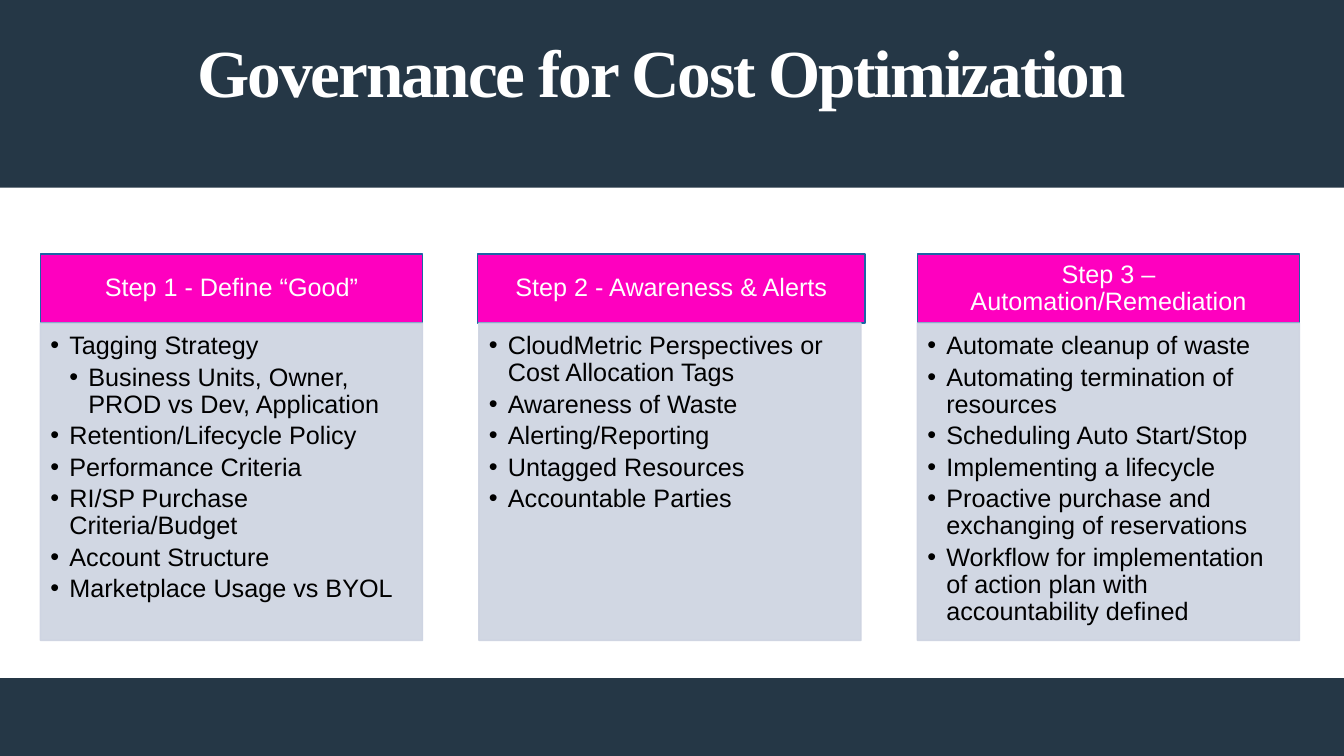
from pptx import Presentation
from pptx.dml.color import RGBColor
from pptx.enum.shapes import MSO_SHAPE
from pptx.enum.text import MSO_ANCHOR, MSO_AUTO_SIZE, PP_ALIGN
from pptx.oxml.ns import qn
from pptx.util import Cm, Pt
from lxml import etree

RECTANGLE = MSO_SHAPE.RECTANGLE
TOP, MIDDLE, BOTTOM = MSO_ANCHOR.TOP, MSO_ANCHOR.MIDDLE, MSO_ANCHOR.BOTTOM
LEFT, CENTER = PP_ALIGN.LEFT, PP_ALIGN.CENTER

NAVY, PINK, BLUE, PALE = "253746", "FE00BF", "1C64A5", "CDD3E1"
WHITE, BLACK = "FFFFFF", "000000"

TITLE = "Governance for Cost Optimization "
# Each step: heading, extra heading width in cm, bullets as (level, text)
STEPS = [
    ("Step 1 - Define “Good”", 0, [
        (1, "Tagging Strategy"),
        (2, "Business Units, Owner, PROD vs Dev, Application"),
        (1, "Retention/Lifecycle Policy"),
        (1, "Performance Criteria"),
        (1, "RI/SP Purchase Criteria/Budget"),
        (1, "Account Structure"),
        (1, "Marketplace Usage vs BYOL"),
    ]),
    ("Step 2 - Awareness & Alerts", 0.13, [
        (1, "CloudMetric Perspectives or Cost Allocation Tags"),
        (1, "Awareness of Waste"),
        (1, "Alerting/Reporting"),
        (1, "Untagged Resources"),
        (1, "Accountable Parties"),
    ]),
    ("Step 3 – Automation/Remediation", 0, [
        (1, "Automate cleanup of waste"),
        (1, "Automating termination of resources"),
        (1, "Scheduling Auto Start/Stop"),
        (1, "Implementing a lifecycle"),
        (1, "Proactive purchase and exchanging of reservations"),
        (1, "Workflow for implementation of action plan with accountability defined"),
    ]),
]

SLIDE_WIDTH, SLIDE_HEIGHT = 33.87, 19.05
BANDS = [(0, 4.73), (17.09, 1.96)]  # top, height
COLUMN_LEFT, COLUMN_PITCH, COLUMN_WIDTH = 1.02, 11.05, 9.63
HEADING_TOP, HEADING_HEIGHT, BODY_HEIGHT = 6.4, 1.74, 8
INDENT = 0.48


def color(value):
    return RGBColor.from_string(value)


def add_box(slide, left, top, width, height, fill, line=None, opacity=None):
    box = slide.shapes.add_shape(RECTANGLE, Cm(left), Cm(top), Cm(width), Cm(height))
    box.shadow.inherit = False
    box.fill.solid()
    box.fill.fore_color.rgb = color(fill)
    if line:
        box.line.color.rgb = color(line)
        box.line.width = Pt(1)
    else:
        box.line.fill.background()
    if opacity:
        for rgb in box.element.spPr.iter(qn("a:srgbClr")):
            etree.SubElement(rgb, qn("a:alpha"), val=str(opacity * 1000))
    return box


def set_frame(shape, anchor, margins):
    """Set anchor and the left, top, right and bottom margins in cm."""
    frame = shape.text_frame
    frame.word_wrap = True
    frame.auto_size = MSO_AUTO_SIZE.NONE
    frame.vertical_anchor = anchor
    (frame.margin_left, frame.margin_top,
     frame.margin_right, frame.margin_bottom) = map(Cm, margins)
    return frame


def set_font(paragraph, name, size, value, bold=False):
    font = paragraph.font
    font.name, font.size, font.bold = name, Pt(size), bold
    font.color.rgb = color(value)


def add_bullet(paragraph, level):
    properties = paragraph._p.get_or_add_pPr()
    properties.set("marL", str(Cm(INDENT * level)))
    properties.set("indent", str(-Cm(INDENT)))
    etree.SubElement(properties, qn("a:buFont"), typeface="Arial")
    etree.SubElement(properties, qn("a:buChar"), char="•")


def add_step(slide, left, heading, extra, bullets):
    header = add_box(slide, left - extra / 4, HEADING_TOP, COLUMN_WIDTH + extra,
                     HEADING_HEIGHT, PINK, BLUE)
    frame = set_frame(header, MIDDLE, (0.36, 0.2, 0.36, 0.2))
    paragraph = frame.paragraphs[0]
    paragraph.text = heading
    paragraph.alignment = CENTER
    paragraph.line_spacing = 0.9
    set_font(paragraph, "Arial", 18, WHITE)

    body = add_box(slide, left, HEADING_TOP + HEADING_HEIGHT, COLUMN_WIDTH,
                   BODY_HEIGHT, PALE, PALE, 90)
    frame = set_frame(body, TOP, (0.25, 0.25, 0.36, 0.41))
    for index, (level, text) in enumerate(bullets):
        paragraph = frame.add_paragraph() if index else frame.paragraphs[0]
        paragraph.text = text
        paragraph.alignment = LEFT
        paragraph.line_spacing = 0.9
        paragraph.space_after = Pt(3)
        paragraph.level = level
        add_bullet(paragraph, level)
        set_font(paragraph, "Arial", 18, BLACK)


def format_title(slide):
    title = slide.shapes.title
    title.left, title.top, title.width, title.height = map(Cm, (0.99, 0, 31.75, 2.79))
    frame = set_frame(title, BOTTOM, (0, 0, 0, 0))
    paragraph = frame.paragraphs[0]
    paragraph.text = TITLE
    paragraph.alignment = CENTER
    paragraph.line_spacing = Pt(35)
    set_font(paragraph, "Times New Roman", 48, WHITE, True)
    paragraph._p.pPr.find(qn("a:defRPr")).set("spc", "-150")
    # Bring the title in front of the bands
    slide.shapes._spTree.append(title.element)


def main():
    presentation = Presentation()
    presentation.slide_width = Cm(SLIDE_WIDTH)
    presentation.slide_height = Cm(SLIDE_HEIGHT)
    slide = presentation.slides.add_slide(presentation.slide_layouts[5])
    for top, height in BANDS:
        add_box(slide, 0, top, SLIDE_WIDTH, height, NAVY)
    format_title(slide)
    for index, step in enumerate(STEPS):
        add_step(slide, COLUMN_LEFT + index * COLUMN_PITCH, *step)
    presentation.save("out.pptx")


if __name__ == "__main__":
    main()
